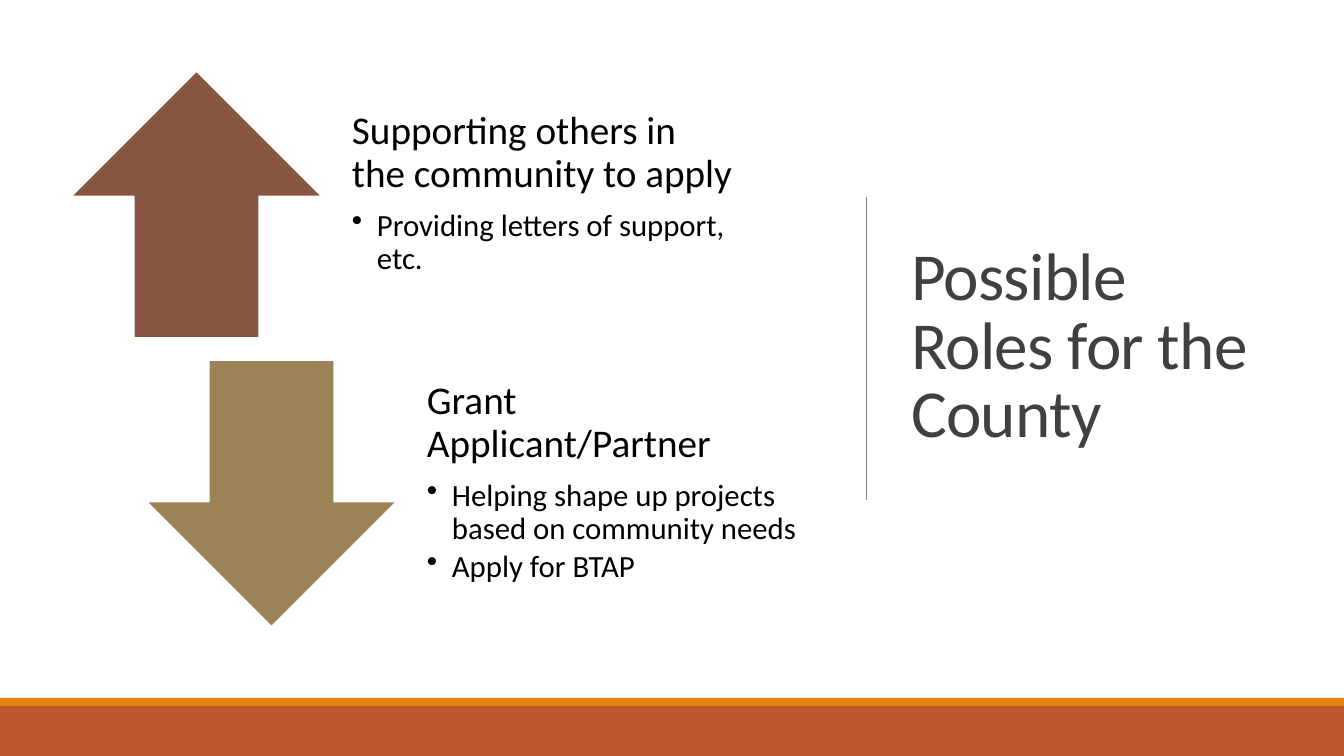
from dataclasses import dataclass

from lxml import etree
from pptx import Presentation
from pptx.dml.color import RGBColor
from pptx.enum.shapes import MSO_CONNECTOR as Connector, MSO_SHAPE as Shape
from pptx.enum.text import MSO_ANCHOR as Anchor, MSO_AUTO_SIZE as AutoSize, PP_ALIGN as Align
from pptx.oxml.ns import qn
from pptx.util import Emu, Pt

WIDTH, HEIGHT = 1344, 756  # px
EMU_PER_PX = 12192000 / WIDTH


@dataclass(frozen=True)
class Theme:
    font: str = "Calibri"
    title_size: int = 48
    heading_size: int = 28
    bullet_size: int = 22
    title: str = "404040"
    text: str = "000000"
    white: str = "FFFFFF"
    rule: str = "808080"
    stripe: str = "E48312"
    footer: str = "BD582C"
    up: str = "865640"
    down: str = "9B8357"


def px(length):
    return Emu(round(length * EMU_PER_PX))


def color(value):
    return RGBColor.from_string(value)


class Page:
    def __init__(self, deck, theme):
        self.theme = theme
        self.slide = deck.slides.add_slide(deck.slide_layouts[5])
        self.shapes = self.slide.shapes

    def style(self, para, size, fill, spacing, after=0):
        para.font.name = self.theme.font
        para.font.size = Pt(size)
        para.font.color.rgb = color(fill)
        para.alignment = Align.LEFT
        para.line_spacing = spacing
        para.space_before = Pt(0)
        para.space_after = Pt(after)

    def title(self, text, left, top, width, height):
        box = self.shapes.title
        box.left, box.top, box.width, box.height = map(px, (left, top, width, height))
        frame = box.text_frame
        frame.text = text
        frame.word_wrap = True
        frame.auto_size = AutoSize.NONE
        frame.vertical_anchor = Anchor.MIDDLE
        para = frame.paragraphs[0]
        self.style(para, self.theme.title_size, self.theme.title, 0.85)
        # Slightly tightened letters
        para.runs[0].font._element.set("spc", "-50")

    def shape(self, kind, left, top, width, height, fill, outline=None):
        shape = self.shapes.add_shape(kind, *map(px, (left, top, width, height)))
        shape.shadow.inherit = False
        shape.fill.solid()
        shape.fill.fore_color.rgb = color(fill)
        if outline:
            shape.line.color.rgb = color(outline)
            shape.line.width = Pt(1.25)
        else:
            shape.line.fill.background()

    def rule(self, left, top, bottom):
        line = self.shapes.add_connector(
            Connector.STRAIGHT, *map(px, (left, top, left, bottom)))
        line.line.color.rgb = color(self.theme.rule)
        line.line.width = Pt(0.5)
        etree.SubElement(line._element.spPr, qn("a:effectLst"))

    def role(self, heading, bullets, left, top, width, height):
        box = self.shapes.add_textbox(*map(px, (left, top, width, height)))
        frame = box.text_frame
        frame.word_wrap = True
        frame.vertical_anchor = Anchor.MIDDLE
        frame.margin_left = frame.margin_right = frame.margin_bottom = px(22)
        frame.margin_top = 0
        para = frame.paragraphs[0]
        para.text = heading
        size = self.theme.heading_size
        self.style(para, size, self.theme.text, 0.9, 0.35 * size)
        for bullet in bullets:
            para = frame.add_paragraph()
            para.text = bullet
            para.level = 1
            size = self.theme.bullet_size
            self.style(para, size, self.theme.text, 0.9, 0.15 * size)
            self.bullet(para)

    def bullet(self, para):
        properties = para._p.get_or_add_pPr()
        indent = px(25)
        properties.set("marL", str(indent))
        properties.set("indent", str(-indent))
        mark = etree.Element(qn("a:buChar"), char="•")
        properties.find(qn("a:spcAft")).addnext(mark)


def main():
    theme = Theme()
    deck = Presentation()
    deck.slide_width, deck.slide_height = px(WIDTH), px(HEIGHT)
    page = Page(deck, theme)

    # Title and its divider
    page.title("Possible Roles for the County", 901, 70, 372, 557)
    page.rule(866, 197, 500)

    # Footer bands
    page.shape(Shape.RECTANGLE, 0, 698, WIDTH, 8, theme.stripe)
    page.shape(Shape.RECTANGLE, 0, 706, WIDTH, 50, theme.footer)

    # Roles: each row steps right and down
    roles = [
        (Shape.UP_ARROW, theme.up, "Supporting others in the community to apply",
         ["Providing letters of support, etc."]),
        (Shape.DOWN_ARROW, theme.down, "Grant Applicant/Partner",
         ["Helping shape up projects based on community needs", "Apply for BTAP"]),
    ]
    for row, (arrow, fill, heading, bullets) in enumerate(roles):
        left, top = 71 + 75 * row, 71 + 289 * row
        page.shape(arrow, left, top, 251, 267, fill, theme.white)
        page.role(heading, bullets, left + 259, top, 426, 267)

    deck.save("out.pptx")


if __name__ == "__main__":
    main()
